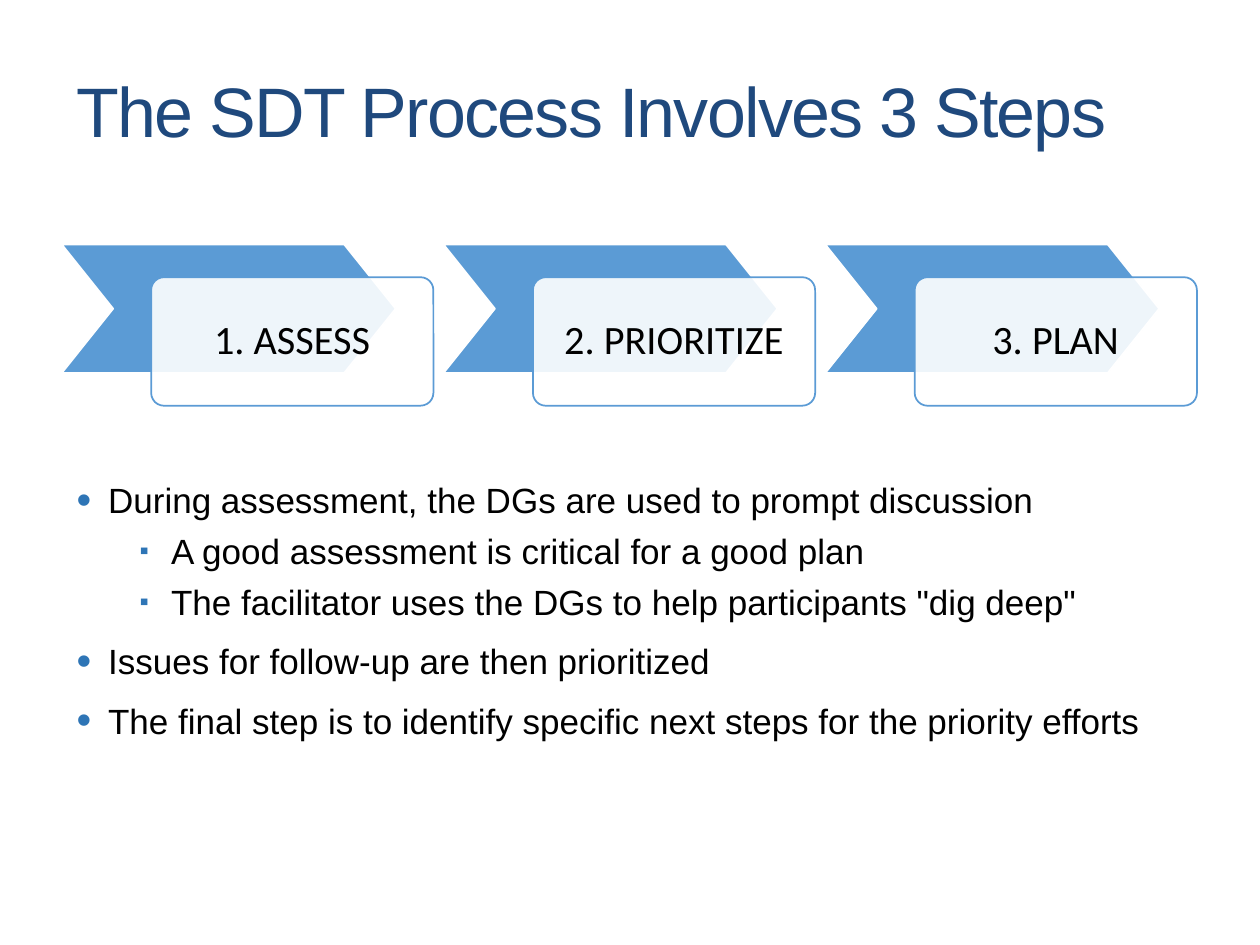
from lxml import etree
from pptx import Presentation
from pptx.dml.color import RGBColor
from pptx.enum.shapes import MSO_SHAPE
from pptx.enum.text import MSO_ANCHOR, MSO_AUTO_SIZE, PP_ALIGN
from pptx.oxml.ns import qn
from pptx.util import Inches, Pt

CHEVRON = MSO_SHAPE.CHEVRON
ROUNDED = MSO_SHAPE.ROUNDED_RECTANGLE
MIDDLE = MSO_ANCHOR.MIDDLE
NO_AUTOFIT = MSO_AUTO_SIZE.NONE
LEFT, CENTER = PP_ALIGN.LEFT, PP_ALIGN.CENTER

COLORS = {
    "title": "1F497D",
    "step": "5B9BD5",
    "bullet": "2E75B6",
    "text": "000000",
    "white": "FFFFFF",
}
BULLETS = [("•", 120, 0.25, 10), ("▪", 75, 0.75, 5)]
STEPS = ["1. ASSESS", "2. PRIORITIZE", "3. PLAN"]
STEP_LEFT, STEP_PITCH = 0.49, 3.03
POINTS = [
    (0, "During assessment, the DGs are used to prompt discussion"),
    (1, "A good assessment is critical for a good plan"),
    (1, 'The facilitator uses the DGs to help participants "dig deep"'),
    (0, "Issues for follow-up are then prioritized"),
    (0, "The final step is to identify specific next steps for the priority efforts"),
]


def rgb(name):
    return RGBColor.from_string(COLORS[name])


class StepsSlide:
    """Holds the slide and the style of its title, steps and bullets."""

    def __init__(self, slide):
        self.slide = slide

    def style(self, paragraph, size, font="Arial", color="text"):
        for run in paragraph.runs:
            run.font.size = Pt(size)
            run.font.name = font
            run.font.color.rgb = rgb(color)

    def title(self, text, left, top, width, height):
        title = self.slide.shapes.title
        title.left, title.top = Inches(left), Inches(top)
        title.width, title.height = Inches(width), Inches(height)
        frame = title.text_frame
        frame.text = text
        frame.auto_size = NO_AUTOFIT
        frame.vertical_anchor = MIDDLE
        heading = frame.paragraphs[0]
        heading.alignment = LEFT
        self.style(heading, 40, color="title")
        heading.runs[0].font._element.set("spc", "-100")

    def block(self, kind, adjustment, fill, line, left, top, width, height):
        block = self.slide.shapes.add_shape(
            kind, Inches(left), Inches(top), Inches(width), Inches(height))
        block.adjustments[0] = adjustment
        block.shadow.inherit = False
        block.fill.solid()
        block.fill.fore_color.rgb = rgb(fill)
        block.line.color.rgb = rgb(line)
        block.line.width = Pt(1)
        return block

    def step(self, text, left, top):
        self.block(CHEVRON, 0.4, "step", "white", left, top, 2.65, 1.02)
        card = self.block(ROUNDED, 0.1, "white", "step",
                          left + 0.71, top + 0.26, 2.24, 1.02)
        fill_color = card.fill._xPr.find(qn("a:solidFill"))[0]
        etree.SubElement(fill_color, qn("a:alpha"), val="90000")
        frame = card.text_frame
        frame.text = text
        frame.word_wrap = True
        frame.vertical_anchor = MIDDLE
        frame.margin_left = frame.margin_right = Inches(0.18)
        frame.margin_top = frame.margin_bottom = Inches(0.18)
        label = frame.paragraphs[0]
        label.alignment = CENTER
        label.line_spacing = 0.9
        self.style(label, 23, "Calibri")

    def bullet(self, paragraph, level):
        mark, percent, indent, space = BULLETS[level]
        paragraph.level = level
        if paragraph._p.getprevious().tag == qn("a:p"):
            paragraph.space_before = Pt(space)
        properties = paragraph._p.get_or_add_pPr()
        properties.set("marL", str(Inches(indent)))
        properties.set("indent", str(Inches(-0.25)))
        color = etree.SubElement(properties, qn("a:buClr"))
        etree.SubElement(color, qn("a:srgbClr"), val=COLORS["bullet"])
        etree.SubElement(properties, qn("a:buSzPct"), val=str(percent * 1000))
        etree.SubElement(properties, qn("a:buFont"), typeface="Arial")
        etree.SubElement(properties, qn("a:buChar"), char=mark)

    def bullets(self, points, left, top, width, height):
        body = self.slide.shapes.add_textbox(
            Inches(left), Inches(top), Inches(width), Inches(height))
        frame = body.text_frame
        frame.word_wrap = True
        frame.text = "\n".join(text for _, text in points)
        for paragraph, (level, _) in zip(frame.paragraphs, points):
            self.bullet(paragraph, level)
            self.style(paragraph, 20)


def main():
    deck = Presentation()
    deck.slide_width, deck.slide_height = Inches(10), Inches(7.5)
    page = StepsSlide(deck.slides.add_slide(deck.slide_layouts[5]))
    page.title("The SDT Process Involves 3 Steps", 0.51, 0.33, 9, 1.08)
    for index, step in enumerate(STEPS):
        page.step(step, STEP_LEFT + index * STEP_PITCH, 1.94)
    page.bullets(POINTS, 0.51, 3.75, 8.83, 2.7)
    deck.save("out.pptx")


if __name__ == "__main__":
    main()
